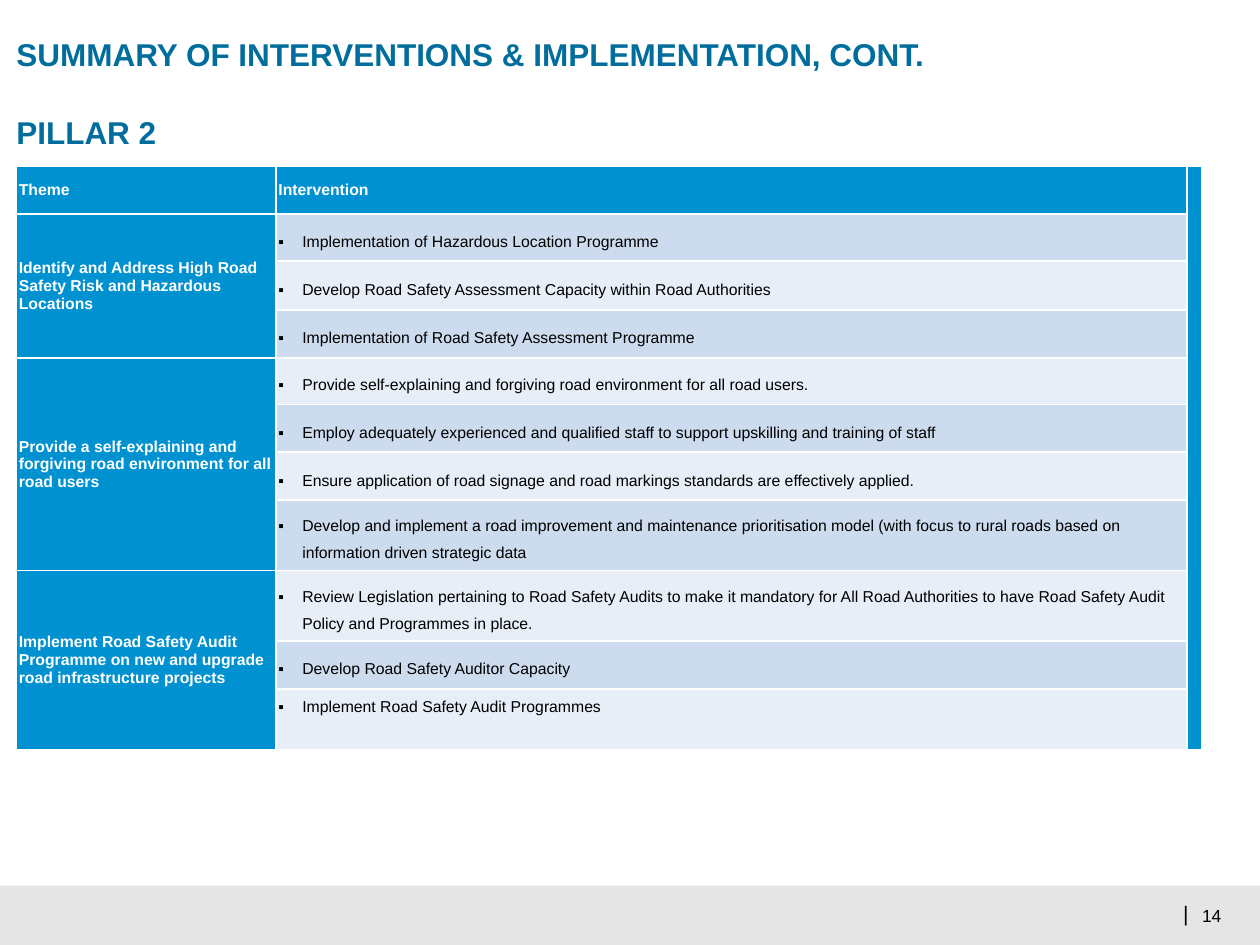
from lxml.etree import SubElement
from pptx import Presentation
from pptx.dml.color import RGBColor
from pptx.enum.shapes import MSO_SHAPE as Shape
from pptx.enum.text import MSO_ANCHOR as Anchor, MSO_AUTO_SIZE as AutoSize, PP_ALIGN as Align
from pptx.oxml.ns import qn
from pptx.util import Inches, Pt

WHITE = RGBColor(0xFF, 0xFF, 0xFF)
BLACK = RGBColor(0x00, 0x00, 0x00)
GREY = RGBColor(0xE5, 0xE5, 0xE5)
TITLE_BLUE = RGBColor(0x00, 0x6D, 0x9C)
BLUE = RGBColor(0x00, 0x91, 0xD0)
BANDS = [RGBColor(0xCC, 0xDC, 0xEE), RGBColor(0xE7, 0xEE, 0xF7)]

TITLE = ["SUMMARY OF INTERVENTIONS & IMPLEMENTATION, CONT.", "PILLAR 2"]
THEMES = {
    "Identify and Address High Road Safety Risk and Hazardous Locations": [
        "Implementation of Hazardous Location Programme",
        "Develop Road Safety Assessment Capacity within Road Authorities",
        "Implementation of Road Safety Assessment Programme",
    ],
    "Provide a self-explaining and forgiving road environment for all road users": [
        "Provide self-explaining and forgiving road environment for all road users.",
        "Employ adequately experienced and qualified staff to support upskilling and training of staff",
        "Ensure application of road signage and road markings standards are effectively applied.",
        "Develop and implement a road improvement and maintenance prioritisation model "
        "(with focus to rural roads based on information driven strategic data",
    ],
    "Implement Road Safety Audit Programme on new and upgrade road infrastructure projects": [
        "Review Legislation pertaining to Road Safety Audits to make it mandatory for "
        "All Road Authorities to have Road Safety Audit Policy and Programmes in place.",
        "Develop Road Safety Auditor Capacity",
        "Implement Road Safety Audit Programmes",
    ],
}
COLUMNS = [2.06, 7.23, 0.12]
ROWS = [0.38, 0.37, 0.39, 0.38, 0.37, 0.38, 0.38, 0.56, 0.56, 0.38, 0.48]


def style_font(para, size, color, bold=False):
    para.font.name = "Arial"
    para.font.size = Pt(size)
    para.font.bold = bold
    para.font.color.rgb = color


def fill_cell(cell, text, color, bullet=False):
    cell.fill.solid()
    cell.fill.fore_color.rgb = color
    cell.vertical_anchor = Anchor.MIDDLE
    cell.margin_left = cell.margin_right = Inches(0.02)
    cell.margin_top = cell.margin_bottom = 0
    cell.text = text
    para = cell.text_frame.paragraphs[0]
    para.space_before = para.space_after = Pt(2)
    if bullet:
        para.line_spacing = 1.5
        props = para._p.get_or_add_pPr()
        props.set("marL", str(Inches(0.19)))
        props.set("indent", str(-Inches(0.19)))
        SubElement(props, qn("a:buFont"), typeface="Arial")
        SubElement(props, qn("a:buChar"), char="▪")
    style_font(para, 9, BLACK if bullet else WHITE, not bullet)


deck = Presentation()
deck.slide_width, deck.slide_height = Inches(10), Inches(7.5)
page = deck.slides.add_slide(deck.slide_layouts[5])

footer = page.shapes.add_shape(Shape.RECTANGLE, 0, Inches(7.03), deck.slide_width, Inches(0.47))
footer.shadow.inherit = False
footer.fill.solid()
footer.fill.fore_color.rgb = GREY
footer.line.fill.background()

for text, left, top, width, height, size, align in [
    ("14", 9.54, 7.18, 0.18, 0.17, 10, Align.LEFT),
    ("|", 9.39, 7.15, 0.04, 0.2, 12, Align.RIGHT),
]:
    box = page.shapes.add_textbox(Inches(left), Inches(top), Inches(width), Inches(height))
    frame = box.text_frame
    frame.margin_left = frame.margin_right = frame.margin_top = frame.margin_bottom = 0
    frame.vertical_anchor = Anchor.MIDDLE
    frame.word_wrap = False
    frame.text = text
    frame.paragraphs[0].alignment = align
    style_font(frame.paragraphs[0], size, BLACK)

title = page.shapes.title
title.left, title.top, title.width, title.height = map(Inches, (0.13, 0.26, 9.62, 0.91))
frame = title.text_frame
frame.margin_left = frame.margin_right = frame.margin_top = frame.margin_bottom = 0
frame.vertical_anchor = Anchor.TOP
frame.auto_size = AutoSize.NONE
frame.text = "\n".join(TITLE)
for para in frame.paragraphs:
    para.alignment = Align.LEFT
    para.line_spacing = 1.05
    style_font(para, 18, TITLE_BLUE, True)
frame.paragraphs[1].space_before = Pt(22)

table = page.shapes.add_table(
    len(ROWS), len(COLUMNS), Inches(0.13), Inches(1.32), Inches(sum(COLUMNS)), Inches(sum(ROWS))
).table
for column, width in zip(table.columns, COLUMNS):
    column.width = Inches(width)
for row, height in zip(table.rows, ROWS):
    row.height = Inches(height)
    fill_cell(row.cells[0], "", BLUE)
    fill_cell(row.cells[2], "", BLUE)

fill_cell(table.cell(0, 0), "Theme", BLUE)
fill_cell(table.cell(0, 1), "Intervention", BLUE)
table.cell(0, 2).merge(table.cell(len(ROWS) - 1, 2))

start = 1
for theme, interventions in THEMES.items():
    end = start + len(interventions)
    table.cell(start, 0).merge(table.cell(end - 1, 0))
    fill_cell(table.cell(start, 0), theme, BLUE)
    for index, intervention in enumerate(interventions, start):
        fill_cell(table.cell(index, 1), intervention, BANDS[(index - 1) % 2], bullet=True)
    start = end
table.cell(len(ROWS) - 1, 1).vertical_anchor = Anchor.TOP

deck.save("out.pptx")
